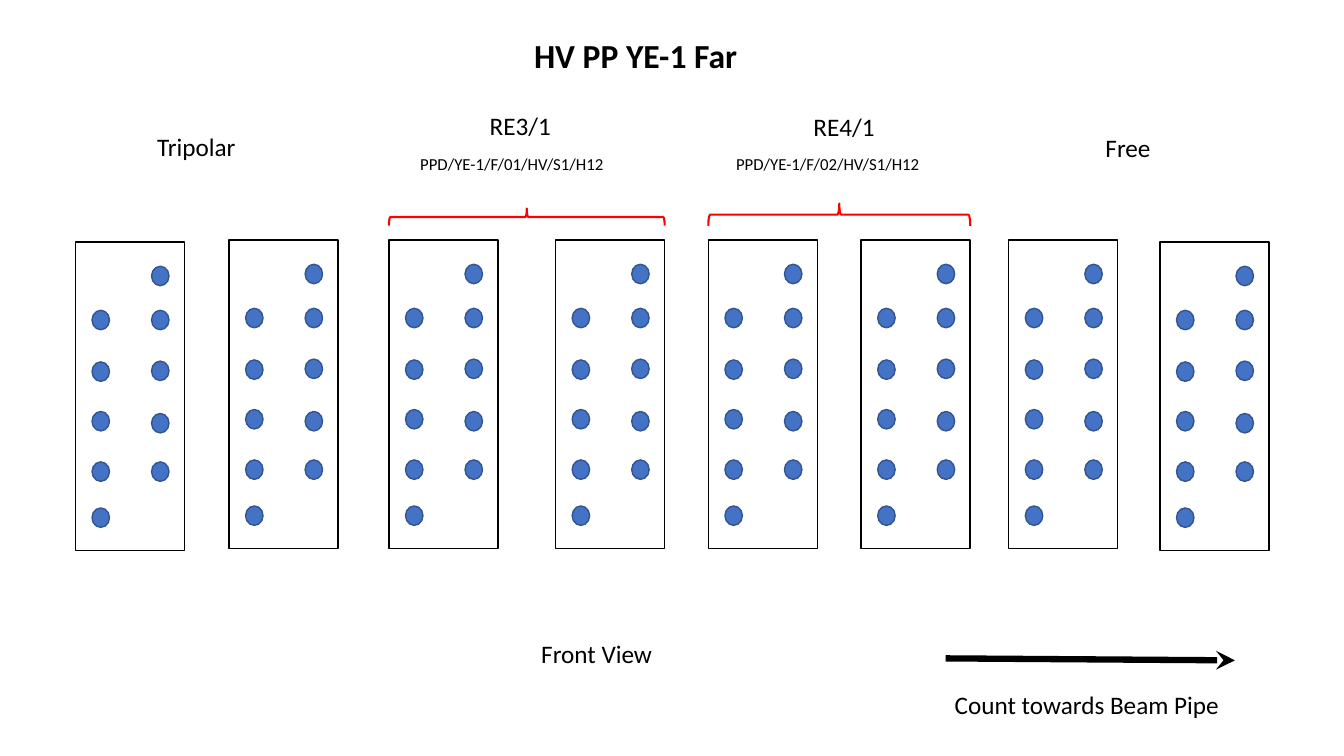
"""Builds the HV patch panel front view slide for YE-1 Far."""
import pptx
import pptx.dml.color
import pptx.enum.shapes
import pptx.enum.text
import pptx.oxml
import pptx.oxml.ns
import pptx.util

Cm, Pt = pptx.util.Cm, pptx.util.Pt
SHAPE = pptx.enum.shapes.MSO_SHAPE
FONT = "Calibri"
BLACK, BLUE, NAVY, RED = "000000", "4472C4", "325491", "FF0000"

PANEL_W, PANEL_H = 2.75, 7.77
PANELS = [
    (1.9, 6.1), (5.77, 6.05), (9.8, 6.05), (14, 6.05),
    (17.85, 6.05), (21.7, 6.05), (25.42, 6.05), (29.23, 6.1),
]
DOT_W, DOT_H = 0.44, 0.49
DOT_COLUMNS = {
    0.42: [1.72, 3.02, 4.27, 5.54, 6.7],
    1.92: [0.61, 1.72, 3, 4.32, 5.54],
}
# first panel, last panel, middle height, depth
BRACES = [(2, 3, 5.47, 0.43), (4, 5, 5.41, 0.56)]
# text, left, top, width, height, size, bold, wrap
LABELS = [
    ("HV PP YE-1 Far", 13.21, 0.76, 7.67, 1.28, 24, True, True),
    ("Tripolar", 3.71, 3.18, 3.99, 1.03, 18, False, True),
    ("RE3/1", 12.09, 2.65, 2.08, 1.03, 18, False, True),
    ("RE4/1", 20.25, 2.69, 2.08, 1.03, 18, False, True),
    ("Free", 27.61, 3.22, 3.99, 1.03, 18, False, True),
    ("PPD/YE-1/F/01/HV/S1/H12", 10.34, 3.76, 6.1, 0.77, 12, False, True),
    ("PPD/YE-1/F/02/HV/S1/H12", 18.3, 3.74, 6.1, 0.77, 12, False, True),
    ("Front View", 13.39, 15.96, 3.33, 1.03, 18, False, False),
    ("Count towards Beam Pipe", 23.81, 17.24, 7.24, 1.03, 18, False, False),
]
ARROW = (23.83, 16.59, 31.12, 16.64)


def rgb(value):
    """Return the colour for a hex string."""
    return pptx.dml.color.RGBColor.from_string(value)


def add_shape(shapes, kind, box, line, width=1, fill=None):
    """Add an outlined preset shape, filled if a colour is given."""
    sp = shapes.add_shape(kind, *map(Cm, box))
    sp.shadow.inherit = False
    if fill:
        sp.fill.solid()
        sp.fill.fore_color.rgb = rgb(fill)
    else:
        sp.fill.background()
    sp.line.color.rgb = rgb(line)
    sp.line.width = Pt(width)
    return sp


def add_panel(shapes, left, top):
    """Add one panel with its two columns of connectors."""
    panel = shapes.add_group_shape().shapes
    add_shape(panel, SHAPE.RECTANGLE, (left, top, PANEL_W, PANEL_H), BLACK)
    for dx, rows in DOT_COLUMNS.items():
        for dy in rows:
            box = (left + dx, top + dy, DOT_W, DOT_H)
            add_shape(panel, SHAPE.OVAL, box, NAVY, fill=BLUE)


def add_brace(shapes, first, last, mid, depth):
    """Add a brace pointing up that spans a run of panels."""
    left, right = PANELS[first][0], PANELS[last][0] + PANEL_W
    span = right - left
    box = ((left + right - depth) / 2, mid - span / 2, depth, span)
    sp = add_shape(shapes, SHAPE.LEFT_BRACE, box, RED, 1.5)
    sp.rotation = 90


def add_label(shapes, text, left, top, width, height, size, bold, wrap):
    """Add one line of text."""
    sp = shapes.add_textbox(Cm(left), Cm(top), Cm(width), Cm(height))
    tf = sp.text_frame
    tf.word_wrap = wrap
    tf.auto_size = pptx.enum.text.MSO_AUTO_SIZE.SHAPE_TO_FIT_TEXT
    p = tf.paragraphs[0]
    p.text = text
    p.font.name = FONT
    p.font.size = Pt(size)
    p.font.bold = bold
    p.font.color.rgb = rgb(BLACK)


def add_arrow(shapes, ends):
    """Add the thick counting arrow."""
    straight = pptx.enum.shapes.MSO_CONNECTOR.STRAIGHT
    cx = shapes.add_connector(straight, *map(Cm, ends))
    cx.line.color.rgb = rgb(BLACK)
    cx.line.width = Pt(4.5)
    qn = pptx.oxml.ns.qn
    tail = cx.line._get_or_add_ln().makeelement(qn("a:tailEnd"), {"type": "stealth"})
    cx.line._get_or_add_ln().append(tail)
    sp_pr = cx._element.spPr
    sp_pr.append(sp_pr.makeelement(qn("a:effectLst"), {}))


def main():
    """Build and save the slide."""
    prs = pptx.Presentation()
    prs.slide_width, prs.slide_height = Cm(33.87), Cm(19.05)
    shapes = prs.slides.add_slide(prs.slide_layouts[6]).shapes
    for panel in PANELS:
        add_panel(shapes, *panel)
    for brace in BRACES:
        add_brace(shapes, *brace)
    for label in LABELS:
        add_label(shapes, *label)
    add_arrow(shapes, ARROW)
    prs.save("out.pptx")


if __name__ == "__main__":
    main()
